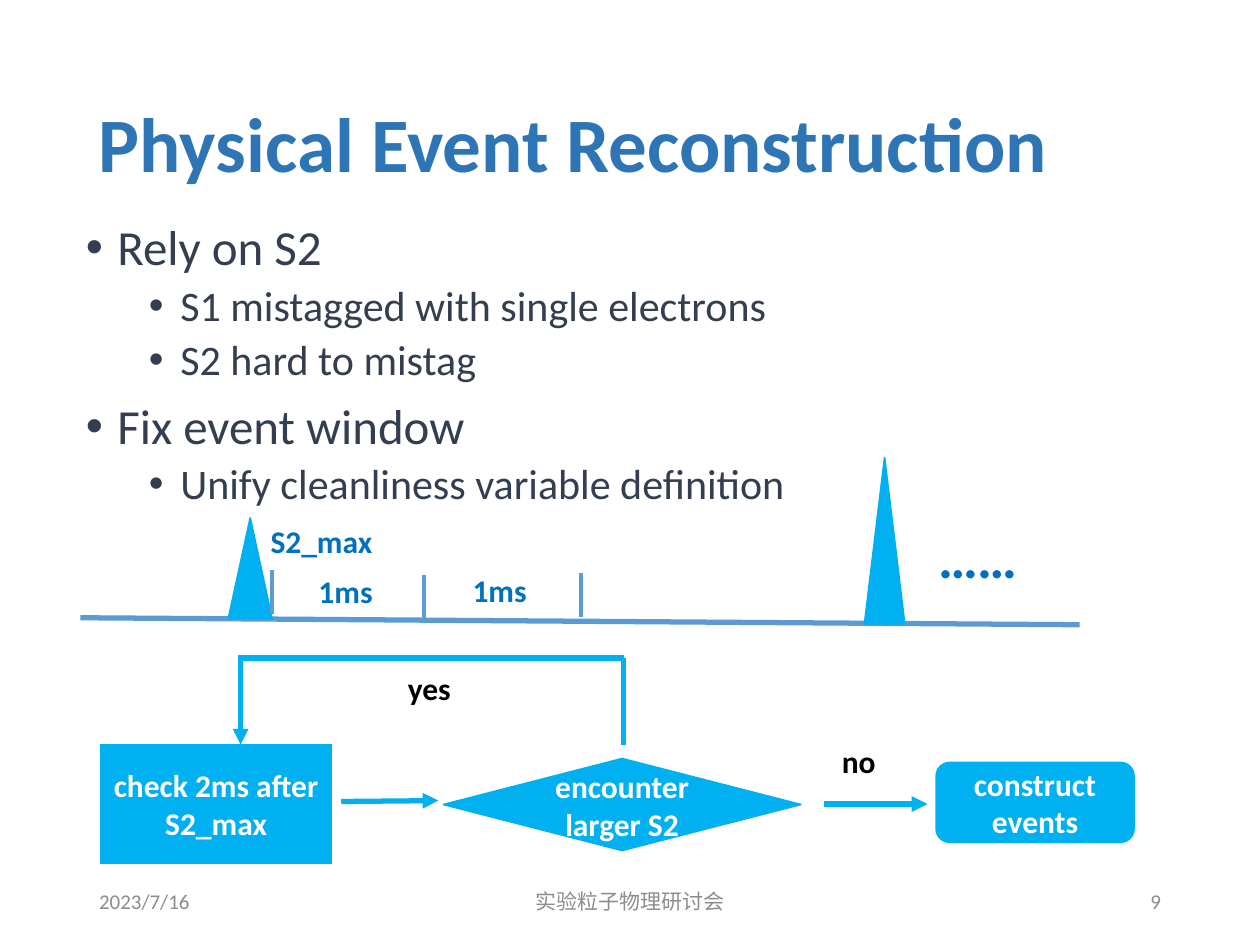
"""Build the slide on physical event reconstruction with its timeline and flow chart."""
from lxml import etree
from pptx import Presentation
from pptx.dml.color import RGBColor
from pptx.enum.shapes import MSO_CONNECTOR as Connector, MSO_SHAPE as Shape
from pptx.enum.text import MSO_ANCHOR as Anchor, PP_ALIGN as Align
from pptx.oxml.ns import qn
from pptx.util import Pt

color = RGBColor.from_string
LEFT, CENTER, RIGHT = Align.LEFT, Align.CENTER, Align.RIGHT
SKY, STEEL, BLUE = "00B0F0", "5B9BD5", "0070C0"

presentation = Presentation()
presentation.slide_width, presentation.slide_height = Pt(720), Pt(540)
slide = presentation.slides.add_slide(presentation.slide_layouts[6])


def write(paragraph, text, size, hex_color, bold=False, align=LEFT):
    paragraph.text = text
    paragraph.alignment = align
    font_format = {"name": "Calibri", "size": Pt(size), "bold": bold}
    for name, value in font_format.items():
        setattr(paragraph.font, name, value)
    paragraph.font.color.rgb = color(hex_color)


def add_line(start_x, start_y, end_x, end_y, hex_color, width, arrow=False):
    connector = slide.shapes.add_connector(
        Connector.STRAIGHT, Pt(start_x), Pt(start_y), Pt(end_x), Pt(end_y))
    connector.line.color.rgb = color(hex_color)
    connector.line.width = Pt(width)
    if arrow:
        line_xml = connector.line._get_or_add_ln()
        etree.SubElement(line_xml, qn("a:tailEnd"), type="triangle")
    etree.SubElement(connector._element.spPr, qn("a:effectLst"))


text_boxes = [
    ("Physical Event Reconstruction", 49.5, 29, 621, 104.4, 44, "2E75B6", True, LEFT, Anchor.MIDDLE),
    ("9", 508.5, 500.5, 162, 28.75, 12, "8C8C8C", False, RIGHT, Anchor.MIDDLE),
    ("2023/7/16", 49.5, 500.5, 162, 28.75, 12, "8C8C8C", False, LEFT, Anchor.MIDDLE),
    ("实验粒子物理研讨会", 238.5, 500.5, 243, 28.75, 12, "8C8C8C", False, CENTER, Anchor.MIDDLE),
    ("yes", 226, 379, 45, 29, 18, "000000", True, LEFT, Anchor.TOP),
    ("no", 474, 420.5, 45, 29, 18, "000000", True, LEFT, Anchor.TOP),
    ("1ms", 170, 323.5, 55, 29, 18, BLUE, True, CENTER, Anchor.TOP),
    ("1ms", 242, 322.5, 87, 29, 18, BLUE, True, CENTER, Anchor.TOP),
    ("S2_max", 147.5, 294.5, 85, 29, 18, BLUE, True, LEFT, Anchor.TOP),
    ("……", 529, 295, 137, 46, 32, BLUE, True, LEFT, Anchor.TOP),
]
for text, left, top, width, height, size, hex_color, bold, align, anchor in text_boxes:
    frame = slide.shapes.add_textbox(Pt(left), Pt(top), Pt(width), Pt(height)).text_frame
    frame.word_wrap = True
    frame.vertical_anchor = anchor
    write(frame.paragraphs[0], text, size, hex_color, bold, align)

bullets = [
    ("Rely on S2", 0),
    ("S1 mistagged with single electrons", 1),
    ("S2 hard to mistag", 1),
    ("Fix event window", 0),
    ("Unify cleanliness variable definition", 1),
]
bullet_levels = [(18, 10, 28), (54, 5, 24)]
frame = slide.shapes.add_textbox(Pt(42), Pt(124), Pt(621), Pt(343)).text_frame
frame.word_wrap = True
for index, (text, level) in enumerate(bullets):
    margin, space, size = bullet_levels[level]
    paragraph = frame.add_paragraph() if index else frame.paragraphs[0]
    paragraph.level = level
    paragraph.line_spacing = 0.9
    paragraph.space_before = Pt(space if index else 0)
    properties = paragraph._p.get_or_add_pPr()
    properties.set("marL", str(Pt(margin)))
    properties.set("indent", str(Pt(-18)))
    etree.SubElement(properties, qn("a:buFont"), typeface="Arial")
    etree.SubElement(properties, qn("a:buChar"), char="•")
    write(paragraph, text, size, "333F50")

add_line(46, 353, 617, 357, STEEL, 3)

shapes = [
    (Shape.ISOSCELES_TRIANGLE, 130.5, 296, 25, 57.5, ""),
    (Shape.ISOSCELES_TRIANGLE, 494, 261.5, 23, 95, ""),
    (Shape.RECTANGLE, 57.5, 425.5, 132, 67.5, "check 2ms after S2_max"),
    (Shape.DIAMOND, 253.5, 433.5, 204, 52.5, "encounter larger S2"),
    (Shape.ROUNDED_RECTANGLE, 535, 435.75, 113, 45.5, "construct events"),
]
for kind, left, top, width, height, text in shapes:
    shape = slide.shapes.add_shape(kind, Pt(left), Pt(top), Pt(width), Pt(height))
    shape.shadow.inherit = False
    shape.fill.solid()
    shape.fill.fore_color.rgb = color(SKY)
    shape.line.color.rgb = color(SKY)
    shape.line.width = Pt(1)
    if text:
        shape.text_frame.word_wrap = True
        shape.text_frame.vertical_anchor = Anchor.MIDDLE
        write(shape.text_frame.paragraphs[0], text, 18, "FFFFFF", True, CENTER)

for tick_x, tick_y in [(155.5, 326), (242.5, 328.5), (332, 327.5)]:
    add_line(tick_x, tick_y, tick_x, tick_y + 25, STEEL, 2.25)

flow_lines = [
    (195, 458, 250.5, 457.5, True),
    (471, 459.5, 530, 459.5, True),
    (356.5, 425.5, 356.5, 376, False),
    (356.5, 376, 136, 376, False),
    (137.5, 376, 137.5, 425.5, True),
]
for start_x, start_y, end_x, end_y, arrow in flow_lines:
    add_line(start_x, start_y, end_x, end_y, SKY, 3, arrow)

presentation.save("out.pptx")
